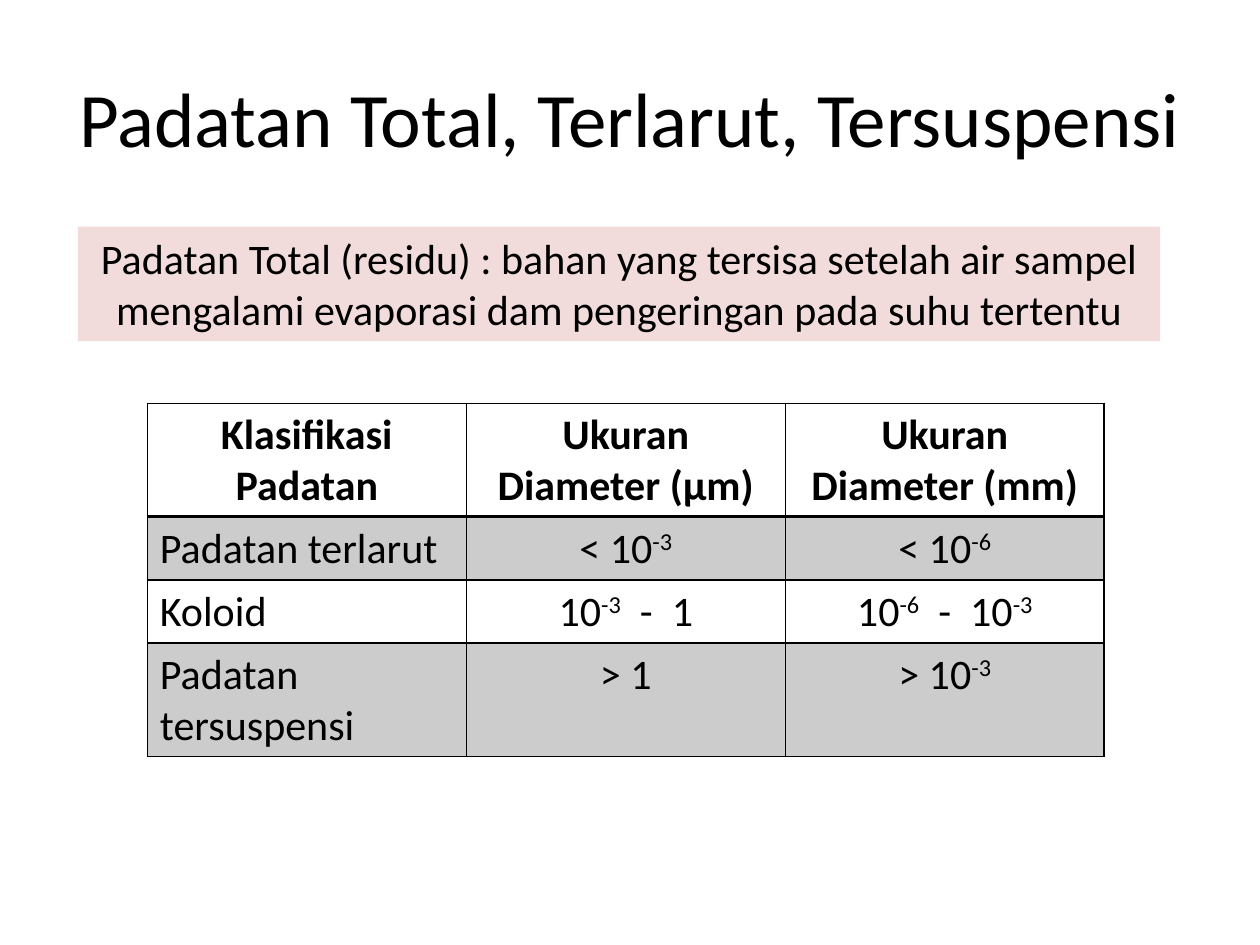
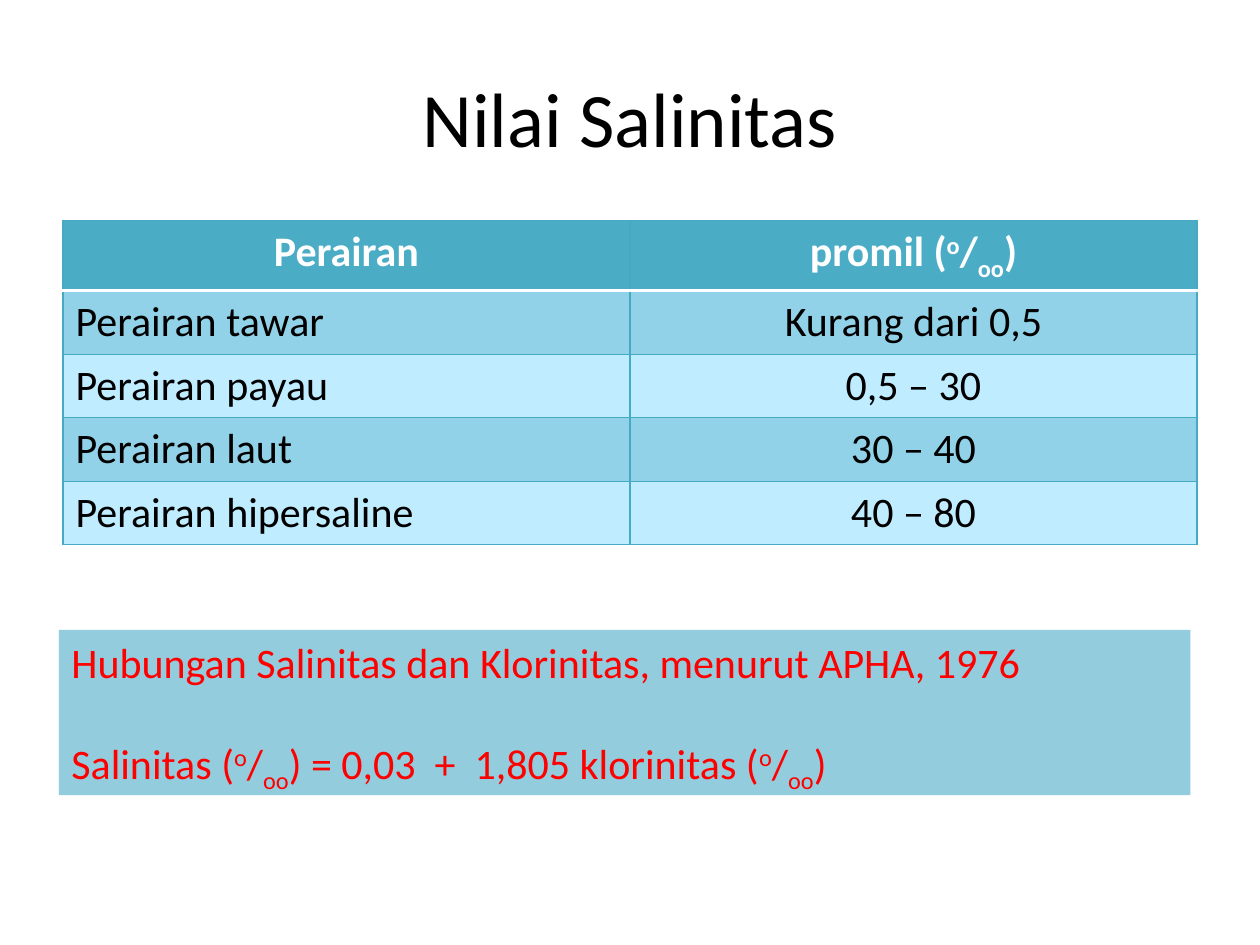
from dataclasses import dataclass
from lxml.etree import SubElement
from pptx import Presentation
from pptx.dml.color import RGBColor
from pptx.enum.shapes import MSO_SHAPE
from pptx.enum.text import MSO_ANCHOR, PP_ALIGN
from pptx.oxml.ns import qn
from pptx.util import Cm, Pt


@dataclass(frozen=True)
class Theme:
    font: str = "Calibri"
    title: int = 44
    body: int = 24
    black: str = "000000"
    white: str = "FFFFFF"
    red: str = "FF0000"
    grey: str = "CCCCCC"
    pink: str = "F2DCDB"
    teal: str = "4BACC6"
    edge: str = "46AAC5"
    band: str = "91D2E8"
    pale: str = "BFECFF"
    note: str = "93CDDD"


theme = Theme()
SHIFT = {"^": "30000", "_": "-25000"}


def write(par, text, align, color=theme.black, size=theme.body, bold=False):
    """Fill a paragraph; pieces split by | rise after ^ and sink after _."""
    par.alignment = align
    style = {"name": theme.font, "size": Pt(size), "bold": bold}
    for piece in text.split("|"):
        run = par.add_run()
        run.text = piece.lstrip("^_")
        for key, value in style.items():
            setattr(run.font, key, value)
        run.font.color.rgb = RGBColor.from_string(color)
        if piece[0] in SHIFT:
            run._r.get_or_add_rPr().set("baseline", SHIFT[piece[0]])


def border(cell, side, color, width):
    """Draw one side of a table cell."""
    line = SubElement(cell._tc.get_or_add_tcPr(), qn("a:ln" + side), w=str(Pt(width)))
    SubElement(SubElement(line, qn("a:solidFill")), qn("a:srgbClr"), val=color)


MID, LEFT = PP_ALIGN.CENTER, PP_ALIGN.LEFT

# Content of the two slides
pages = [
    {
        "title": "Padatan Total, Terlarut, Tersuspensi",
        "box": (1.57, 4.57, 21.82, 2.31),
        "fill": theme.pink, "ink": theme.black, "align": MID,
        "lines": ["Padatan Total (residu) : bahan yang tersisa setelah air sampel "
                  "mengalami evaporasi dam pengeringan pada suhu tertentu"],
        "place": (2.97, 8.13), "col": 6.43, "rows": (2.29, 1.27, 1.27, 2.29),
        "head": (theme.white, theme.black), "bands": (theme.grey, theme.white),
        "line": (theme.black, 1), "rule": (theme.black, 2),
        "cells": [
            ("Klasifikasi Padatan", "Ukuran Diameter (μm)", "Ukuran Diameter (mm)"),
            ("Padatan terlarut", "< 10|^-3", "< 10|^-6"),
            ("Koloid", "10|^-3|  -  1", "10|^-6|  -  10|^-3"),
            ("Padatan tersuspensi", "> 1", "> 10|^-3"),
        ],
    },
    {
        "title": "Nilai Salinitas",
        "box": (1.19, 12.7, 22.81, 3.33),
        "fill": theme.note, "ink": theme.red, "align": LEFT,
        "lines": ["Hubungan Salinitas dan Klorinitas, menurut APHA, 1976",
                  "Salinitas (|^o|/|_oo|) = 0,03  +  1,805 klorinitas (|^o|/|_oo|)"],
        "place": (1.27, 4.45), "col": 11.43, "rows": (1.41,) + (1.28,) * 4,
        "head": (theme.teal, theme.white), "bands": (theme.band, theme.pale),
        "line": (theme.edge, 0.75), "rule": (theme.white, 2),
        "cells": [
            ("Perairan", "promil (|^o|/|_oo|)"),
            ("Perairan tawar", "Kurang dari 0,5"),
            ("Perairan payau", "0,5 – 30"),
            ("Perairan laut", "30 – 40"),
            ("Perairan hipersaline", "40 – 80"),
        ],
    },
]

deck = Presentation()
deck.slide_width, deck.slide_height = Cm(25.4), Cm(19.05)

for page in pages:
    slide = deck.slides.add_slide(deck.slide_layouts[6])

    # Title
    frame = slide.shapes.add_textbox(Cm(1.27), Cm(0.76), Cm(22.86), Cm(3.18)).text_frame
    frame.word_wrap = True
    frame.vertical_anchor = MSO_ANCHOR.MIDDLE
    write(frame.paragraphs[0], page["title"], MID, size=theme.title)

    # Coloured statement
    box = slide.shapes.add_shape(MSO_SHAPE.RECTANGLE, *map(Cm, page["box"]))
    box.shadow.inherit = False
    box.fill.solid()
    box.fill.fore_color.rgb = RGBColor.from_string(page["fill"])
    box.line.fill.background()
    frame = box.text_frame
    frame.word_wrap = True
    frame.vertical_anchor = MSO_ANCHOR.TOP
    for i, text in enumerate(page["lines"]):
        par = frame.paragraphs[0] if i == 0 else frame.add_paragraph()
        par.space_before = Pt(29 * i)
        write(par, text, page["align"], page["ink"])

    # Table
    cells, rows = page["cells"], page["rows"]
    count = len(cells[0])
    table = slide.shapes.add_table(
        len(cells), count, *map(Cm, page["place"]),
        Cm(page["col"] * count), Cm(sum(rows))).table
    for col in table.columns:
        col.width = Cm(page["col"])
    for r, texts in enumerate(cells):
        table.rows[r].height = Cm(rows[r])
        first = r == 0
        fill, ink = page["head"] if first else (page["bands"][(r - 1) % 2], theme.black)
        for c, text in enumerate(texts):
            cell = table.cell(r, c)
            for side in "LRTB":
                thick = (r, side) in ((0, "B"), (1, "T"))
                border(cell, side, *page["rule" if thick else "line"])
            cell.fill.solid()
            cell.fill.fore_color.rgb = RGBColor.from_string(fill)
            align = MID if first or c else LEFT
            write(cell.text_frame.paragraphs[0], text, align, ink, bold=first)

deck.save("out.pptx")
